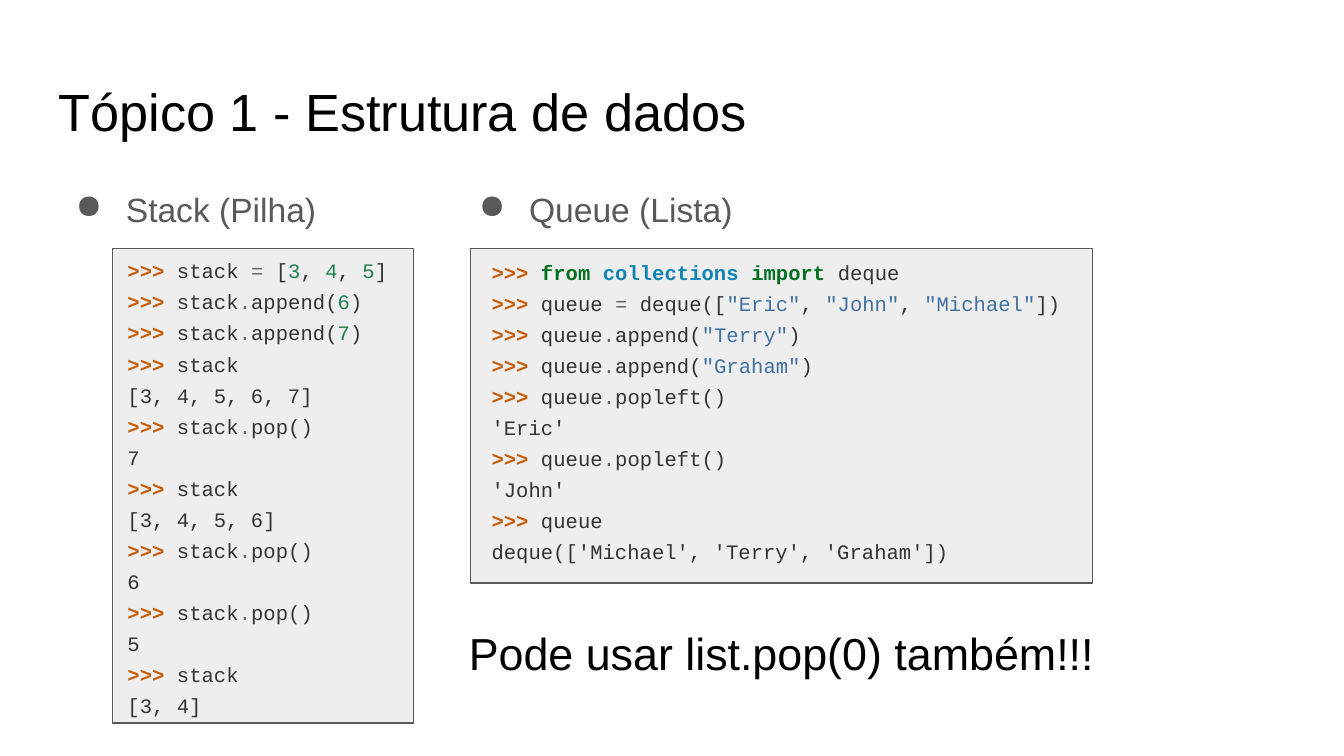
from itertools import groupby

from lxml.etree import SubElement
from pptx import Presentation
from pptx.dml.color import RGBColor
from pptx.enum.shapes import MSO_SHAPE
from pptx.enum.text import MSO_ANCHOR
from pptx.oxml.ns import qn
from pptx.util import Cm, Pt

TITLE = "Tópico 1 - Estrutura de dados"
NOTE = "Pode usar list.pop(0) também!!!"

STACK_CODE = """>>> stack = [3, 4, 5]
>>> stack.append(6)
>>> stack.append(7)
>>> stack
[3, 4, 5, 6, 7]
>>> stack.pop()
7
>>> stack
[3, 4, 5, 6]
>>> stack.pop()
6
>>> stack.pop()
5
>>> stack
[3, 4]"""

QUEUE_CODE = """>>> from collections import deque
>>> queue = deque(["Eric", "John", "Michael"])
>>> queue.append("Terry")
>>> queue.append("Graham")
>>> queue.popleft()
'Eric'
>>> queue.popleft()
'John'
>>> queue
deque(['Michael', 'Terry', 'Graham'])"""

# Boxes are left, top, width, height in centimetres.
COLUMNS = [
    {"heading": "Stack (Pilha)", "heading_box": (0.86, 3.2, 6.02, 1.9),
     "panel": (2.13, 4.7, 5.69, 8.97), "code_box": (2.01, 5.0, 5.82, 8.33),
     "code": STACK_CODE},
    {"heading": "Queue (Lista)", "heading_box": (8.48, 3.2, 6.02, 1.9),
     "panel": (8.89, 4.7, 11.76, 6.32), "code_box": (8.89, 4.45, 12.45, 6.55),
     "code": QUEUE_CODE},
]

PROMPT = ">>> "
PROMPT_COLOR, CODE_COLOR, STRING_COLOR = "C65D09", "333333", "4070A0"
NUMBER_COLOR, GREY = "208050", "595959"
WORD_STYLES = {
    "from": ("007020", True), "import": ("007020", True),
    "collections": ("0E84B5", True),
    "=": ("666666", False), ".": ("666666", False),
}


def color(value):
    return RGBColor.from_string(value)


def highlight(line):
    """Split a console line into (text, color, bold) pieces."""
    if not line.startswith(PROMPT):
        return [(line, CODE_COLOR, False)]
    pieces = [(PROMPT, PROMPT_COLOR, True)]
    for index, part in enumerate(line[len(PROMPT):].split('"')):
        if index % 2:
            pieces.append((f'"{part}"', STRING_COLOR, False))
            continue
        for _, group in groupby(part, lambda c: "word" if c.isalnum() else c in "=."):
            word = "".join(group)
            default = NUMBER_COLOR if word.isdigit() else CODE_COLOR
            pieces.append((word, *WORD_STYLES.get(word, (default, False))))
    return pieces


def add_text(slide, box, text, *, size, font="Arial", fill="000000", code=False,
             anchor=MSO_ANCHOR.TOP, spacing=None, margin=0, indent=0, bullet=None):
    frame = slide.shapes.add_textbox(*map(Cm, box)).text_frame
    frame.word_wrap = True
    frame.vertical_anchor = anchor
    frame.margin_left = frame.margin_right = Cm(0.25)
    frame.margin_top = frame.margin_bottom = Cm(0.25)
    for index, line in enumerate(text.split("\n")):
        paragraph = frame.add_paragraph() if index else frame.paragraphs[0]
        if spacing:
            paragraph.line_spacing = spacing
        properties = paragraph._p.get_or_add_pPr()
        properties.set("marL", str(Cm(margin)))
        properties.set("indent", str(Cm(indent)))
        if bullet:
            bullet_color = SubElement(properties, qn("a:buClr"))
            SubElement(bullet_color, qn("a:srgbClr"), val=fill)
            SubElement(properties, qn("a:buChar"), char=bullet)
        for piece, piece_color, bold in highlight(line) if code else [(line, fill, False)]:
            run = paragraph.add_run()
            run.text = piece
            run.font.name = font
            run.font.size = Pt(size)
            run.font.bold = bold
            run.font.color.rgb = color(piece_color)


def add_panel(slide, box):
    panel = slide.shapes.add_shape(MSO_SHAPE.RECTANGLE, *map(Cm, box))
    panel.shadow.inherit = False
    panel.fill.solid()
    panel.fill.fore_color.rgb = color("EEEEEE")
    panel.line.color.rgb = color(GREY)
    panel.line.width = Pt(0.75)


def main():
    presentation = Presentation()
    presentation.slide_width, presentation.slide_height = Cm(25.4), Cm(14.29)
    slide = presentation.slides.add_slide(presentation.slide_layouts[6])

    add_text(slide, (0.86, 1.24, 23.67, 1.6), TITLE, size=28)
    for column in COLUMNS:
        add_text(slide, column["heading_box"], column["heading"], size=18, fill=GREY,
                 spacing=1.15, margin=1.27, indent=-0.95, bullet="●")
        add_panel(slide, column["panel"])
        add_text(slide, column["code_box"], column["code"], size=11, font="Courier New",
                 code=True, anchor=MSO_ANCHOR.MIDDLE, spacing=1.26, margin=0.15)
    add_text(slide, (8.61, 11.58, 15.39, 1.8), NOTE, size=24)

    presentation.save("out.pptx")


if __name__ == "__main__":
    main()
